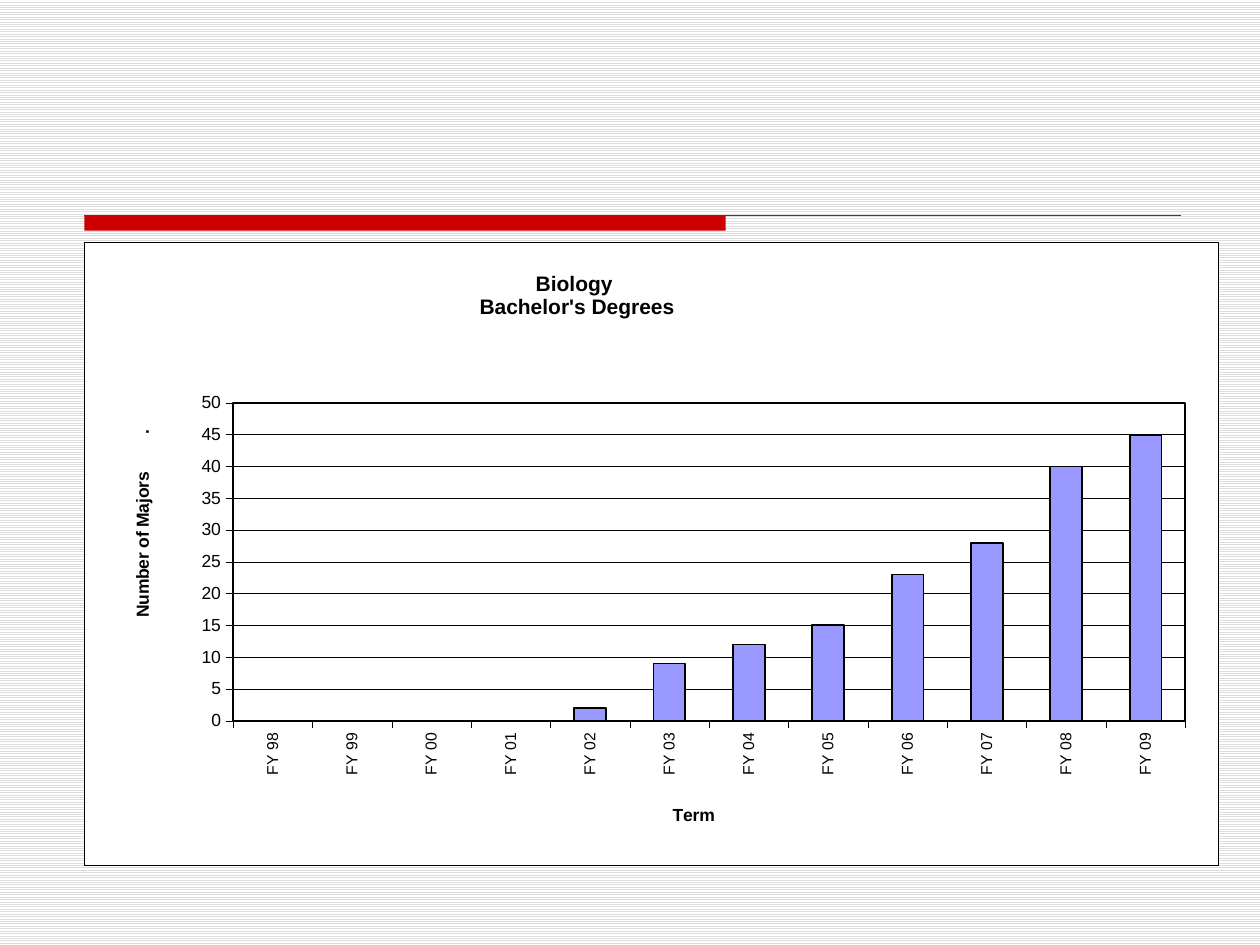
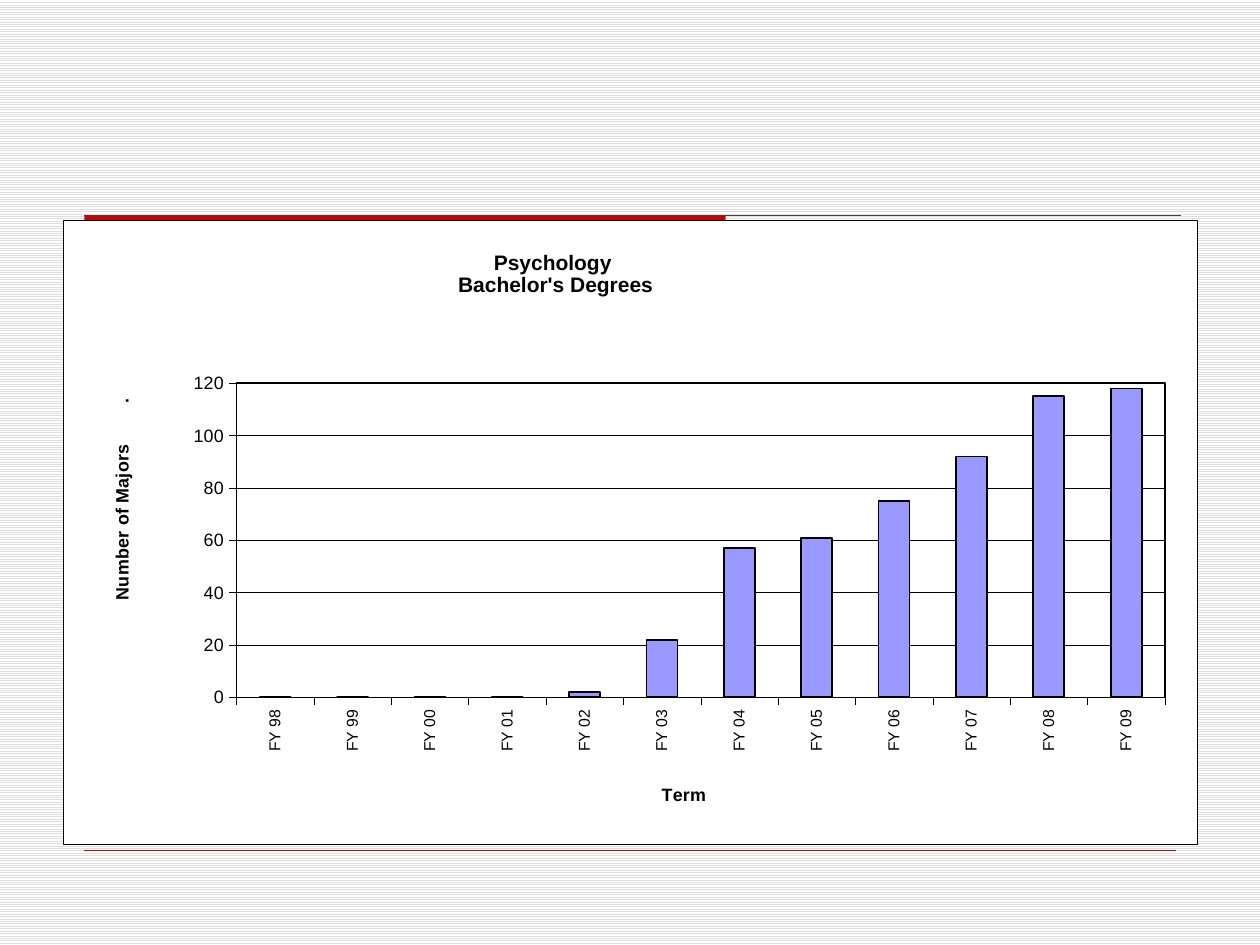
import pptx
import pptx.chart.data
import pptx.dml.color
import pptx.enum.chart
import pptx.enum.dml
import pptx.enum.shapes
import pptx.oxml
import pptx.oxml.ns
import pptx.util
from dataclasses import dataclass

Inches = pptx.util.Inches
Pt = pptx.util.Pt
RGB = pptx.dml.color.RGBColor.from_string
qn = pptx.oxml.ns.qn
NS = pptx.oxml.ns.nsdecls("c", "a")


@dataclass(frozen=True)
class Theme:
    font: str = "Arial"
    ink: str = "000000"
    paper: str = "FFFFFF"
    stripe: str = "DDDDDD"
    red: str = "CC0000"
    rule: str = "404040"
    bar: str = "9999FF"
    head: float = 12
    label: float = 9
    hair: float = 0.25
    edge: float = 1


@dataclass(frozen=True)
class Degree:
    major: str
    values: tuple
    top: int
    step: int
    size: float
    box: tuple
    plot: tuple
    term: tuple
    count: tuple


THEME = Theme()
HEAD_AT = (0.345, 0.04)
YEARS = [f"FY {year % 100:02}" for year in range(1998, 2010)]
DEGREES = [
    Degree("Biology", (0, 0, 0, 0, 2, 9, 12, 15, 23, 28, 40, 45), 50, 5, 10,
           (0.67, 1.92, 9, 4.95), (0.131, 0.258, 0.84, 0.51),
           (0.516, 0.896), (0.038, 0.296)),
    Degree("Psychology", (0, 0, 0, 0, 2, 22, 57, 61, 75, 92, 115, 118), 120, 20, 10.2,
           (0.5, 1.75, 9, 4.95), (0.153, 0.261, 0.819, 0.504),
           (0.525, 0.896), (0.038, 0.28)),
]


def style(font, size, bold=False, color=THEME.ink):
    font.name = THEME.font
    font.size = Pt(size)
    font.bold = bold
    font.color.rgb = RGB(color)


def write(frame, text, **form):
    """Put each line of text in its own formatted paragraph."""
    for index, line in enumerate(text.split("\n")):
        para = frame.paragraphs[0] if index == 0 else frame.add_paragraph()
        run = para.add_run()
        run.text = line
        style(run.font, **form)


def stroke(line, color, width):
    line.color.rgb = RGB(color)
    line.width = Pt(width)


def place(node, spot, index):
    """Give a chart part a fixed place, in shares of the chart."""
    for old in node.findall(qn("c:layout")):
        node.remove(old)
    keys = ("x", "y", "w", "h")[:len(spot)]
    target = '<c:layoutTarget val="inner"/>' if len(spot) == 4 else ""
    modes = "".join(f'<c:{key}Mode val="edge"/>' for key in keys[:2])
    sizes = "".join(f'<c:{key} val="{val}"/>' for key, val in zip(keys, spot))
    node.insert(index, pptx.oxml.parse_xml(
        f"<c:layout {NS}><c:manualLayout>{target}{modes}{sizes}"
        "</c:manualLayout></c:layout>"))


def panel(width):
    """Return the format of a white area with a black border."""
    return pptx.oxml.parse_xml(
        f'<c:spPr {NS}><a:solidFill><a:srgbClr val="{THEME.paper}"/></a:solidFill>'
        f'<a:ln w="{Pt(width)}"><a:solidFill><a:srgbClr val="{THEME.ink}"/>'
        "</a:solidFill></a:ln></c:spPr>")


def rule(slide, left, top, width, color, weight):
    line = slide.shapes.add_connector(
        pptx.enum.shapes.MSO_CONNECTOR.STRAIGHT,
        Inches(left), Inches(top), Inches(left + width), Inches(top))
    stroke(line.line, color, weight)
    props = line._element.spPr
    props.append(props.makeelement(qn("a:effectLst"), {}))


def band(slide, left, top, width):
    """Draw the red bar under its long rule."""
    bar = slide.shapes.add_shape(
        pptx.enum.shapes.MSO_SHAPE.RECTANGLE,
        Inches(left), Inches(top), Inches(5.09), Inches(0.12))
    bar.shadow.inherit = False
    bar.fill.solid()
    bar.fill.fore_color.rgb = RGB(THEME.red)
    bar.line.fill.background()
    rule(slide, left, top, width, THEME.rule, 0.75)


def set_axis(axis, title, size, label):
    axis.has_title = True
    write(axis.axis_title.text_frame, title, size=size, bold=True)
    axis.major_tick_mark = pptx.enum.chart.XL_TICK_MARK.OUTSIDE
    axis.minor_tick_mark = pptx.enum.chart.XL_TICK_MARK.NONE
    stroke(axis.format.line, THEME.ink, THEME.hair)
    style(axis.tick_labels.font, label)


def add_bars(slide, degree):
    data = pptx.chart.data.CategoryChartData()
    data.categories = YEARS
    data.add_series("Series 1", degree.values)
    chart = slide.shapes.add_chart(
        pptx.enum.chart.XL_CHART_TYPE.COLUMN_CLUSTERED,
        *map(Inches, degree.box), data).chart
    chart.has_legend = False
    style(chart.font, degree.size)
    chart.has_title = True
    write(chart.chart_title.text_frame, f"{degree.major} \nBachelor's Degrees",
          size=THEME.head, bold=True)

    bars = chart.plots[0]
    bars.gap_width = 150
    bars.vary_by_categories = False
    series = bars.series[0]
    series.invert_if_negative = False
    series.format.fill.solid()
    series.format.fill.fore_color.rgb = RGB(THEME.bar)
    stroke(series.format.line, THEME.ink, THEME.edge)

    set_axis(chart.category_axis, "Term", degree.size, THEME.label)
    scale = chart.value_axis
    set_axis(scale, "Number of Majors        .", degree.size, degree.size)
    scale.minimum_scale = 0
    scale.maximum_scale = degree.top
    scale.major_unit = degree.step
    scale.has_major_gridlines = True
    stroke(scale.major_gridlines.format.line, THEME.ink, THEME.hair)

    root = chart.element
    for query, turn in (("c:catAx/c:txPr", -90),
                        ("c:valAx/c:title/c:tx/c:rich", -90)):
        body = root.xpath(f".//{query}/a:bodyPr")[0]
        body.set("rot", str(turn * 60000))
        body.set("vert", "horz")
    for query, spot, index in (("c:chart/c:title", HEAD_AT, 1),
                               ("c:chart/c:plotArea", degree.plot, 0),
                               (".//c:catAx/c:title", degree.term, 1),
                               (".//c:valAx/c:title", degree.count, 1)):
        place(root.xpath(query)[0], spot, index)
    root.xpath("c:chart/c:plotArea")[0].append(panel(THEME.edge))
    root.xpath("c:chart")[0].addnext(panel(THEME.hair))


def add_page(deck, degree):
    slide = deck.slides.add_slide(deck.slide_layouts[6])
    band(slide, 0.67, 1.71, 8.7)
    rule(slide, 0.67, 6.75, 8.66, THEME.red, THEME.hair)
    add_bars(slide, degree)


def main():
    deck = pptx.Presentation()
    deck.slide_width, deck.slide_height = Inches(10), Inches(7.5)
    back = deck.slide_master.background.fill
    back.patterned()
    back.pattern = pptx.enum.dml.MSO_PATTERN.LIGHT_HORIZONTAL
    back.fore_color.rgb = RGB(THEME.stripe)
    back.back_color.rgb = RGB(THEME.paper)
    for degree in DEGREES:
        add_page(deck, degree)
    deck.save("out.pptx")


if __name__ == "__main__":
    main()
